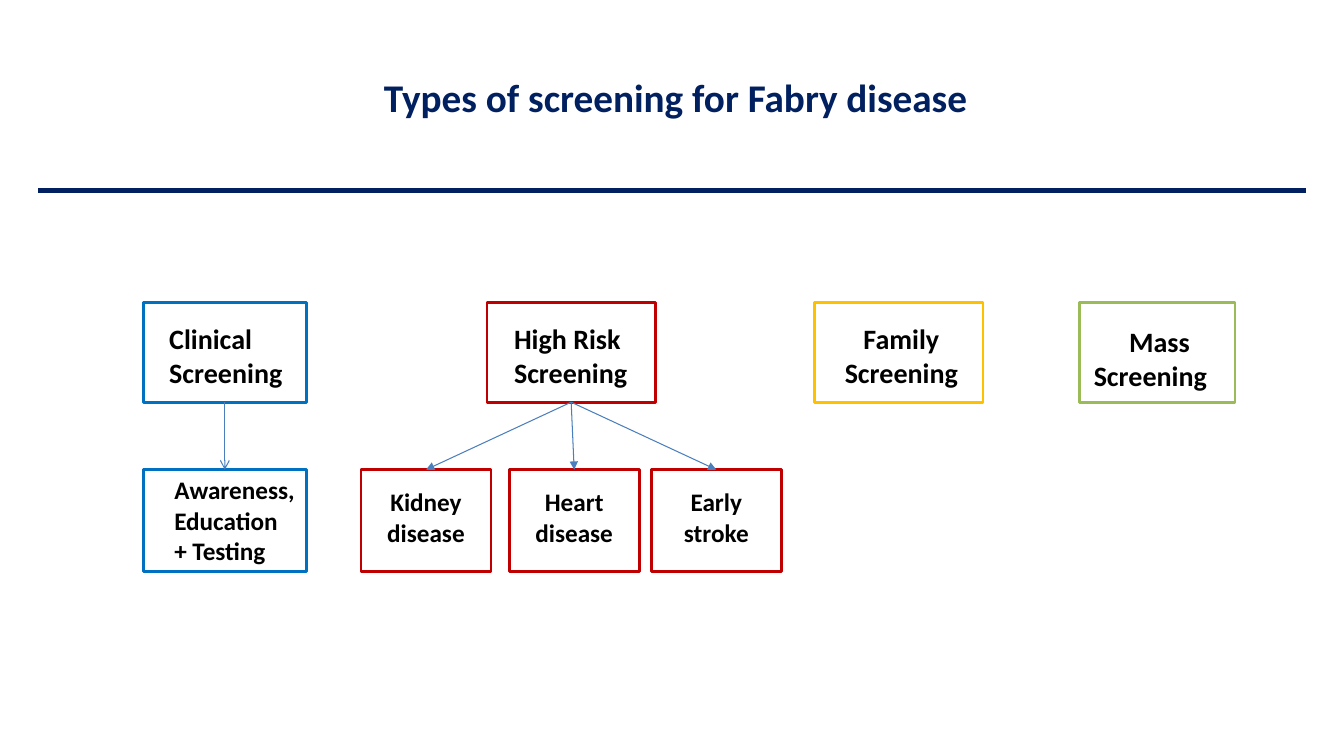
from dataclasses import dataclass

from lxml import etree
from pptx import Presentation
from pptx.dml.color import RGBColor
from pptx.enum.shapes import MSO_CONNECTOR, MSO_SHAPE
from pptx.enum.text import MSO_ANCHOR, PP_ALIGN
from pptx.oxml.ns import qn
from pptx.util import Inches, Pt

RECT = MSO_SHAPE.RECTANGLE
LINE = MSO_CONNECTOR.STRAIGHT
LEFT, MID = PP_ALIGN.LEFT, PP_ALIGN.CENTER
TOP, CENTER = MSO_ANCHOR.TOP, MSO_ANCHOR.MIDDLE


@dataclass(frozen=True)
class Theme:
    font: str = "Calibri"
    navy: str = "002060"
    blue: str = "0070C0"
    red: str = "C00000"
    gold: str = "FFC000"
    green: str = "9BBB59"
    arrow: str = "4B7EBC"
    ink: str = "000000"
    title: int = 28
    head: int = 20
    item: int = 18
    rule: float = 3.5
    edge: float = 2
    thin: float = 0.75


THEME = Theme()


def write(frame, lines, size, color, aligns, anchor=TOP):
    frame.word_wrap = True
    frame.vertical_anchor = anchor
    frame.text = "\n".join(lines)
    for para, align in zip(frame.paragraphs, aligns):
        para.alignment = align
        for run in para.runs:
            font = run.font
            font.name, font.size, font.bold = THEME.font, Pt(size), True
            font.color.rgb = RGBColor.from_string(color)


def join(slide, start, end, color, width, head=None):
    line = slide.shapes.add_connector(LINE, *map(Inches, start + end))
    line.line.color.rgb = RGBColor.from_string(color)
    line.line.width = Pt(width)
    props = line.line._get_or_add_ln()
    if head:
        etree.SubElement(props, qn("a:tailEnd"), type=head)
    etree.SubElement(props.getparent(), qn("a:effectLst"))
    return line


def link(slide, upper, lower, head):
    line = join(slide, (0, 0), (0, 0), THEME.arrow, THEME.thin, head)
    line.begin_connect(upper, 2)
    line.end_connect(lower, 0)


def card(slide, box, color, lines, size, inset, aligns):
    left, top, width, height = box
    rect = slide.shapes.add_shape(RECT, *map(Inches, box))
    rect.shadow.inherit = False
    rect.fill.background()
    rect.line.color.rgb = RGBColor.from_string(color)
    rect.line.width = Pt(THEME.edge)
    dx, dy, wide, high = inset
    label = slide.shapes.add_textbox(
        *map(Inches, (left + dx, top + dy, wide, high)))
    write(label.text_frame, lines, size, THEME.ink, aligns)
    return rect


def header(slide, box):
    left, top, width, height = box
    join(slide, (left, top + height), (left + width, top + height),
         THEME.navy, THEME.rule)
    title = slide.shapes.title
    title.left, title.top = Inches(left + 1.69), Inches(top + 0.68)
    title.width, title.height = Inches(9.26), Inches(0.57)
    write(title.text_frame, ["Types of screening for Fabry disease"],
          THEME.title, THEME.navy, [MID], CENTER)


def chart(slide, box):
    left, top, width, height = box
    tall, low = 0.99, 1.01
    row = top + height - low
    heads = [
        (0, 1.62, THEME.blue, "Clinical", (0.16, 0.14, 1.58, 0.77), (LEFT, LEFT)),
        (3.41, 1.67, THEME.red, "High Risk", (0.17, 0.14, 1.58, 0.77), (LEFT, LEFT)),
        (6.66, 1.67, THEME.gold, "Family", (0.09, 0.14, 1.54, 0.77), (MID, MID)),
        (9.29, 1.54, THEME.green, "Mass", (0.04, 0.17, 1.5, 0.77), (MID, LEFT)),
    ]
    clinic, risk, *_ = [
        card(slide, (left + dx, top, wide, tall), color,
             [name, "Screening"], THEME.head, inset, aligns)
        for dx, wide, color, name, inset, aligns in heads
    ]
    aware = card(slide, (left, row, 1.62, low), THEME.blue,
                 ["Awareness,", "Education", "+ Testing"], THEME.item,
                 (0.21, 0, 1.62, low), [LEFT] * 3)
    link(slide, clinic, aware, "arrow")
    wide = 1.29
    for dx, name in ((2.16, "Kidney disease"), (3.63, "Heart disease"),
                     (5.04, "Early stroke")):
        child = card(slide, (left + dx, row, wide, low), THEME.red, [name],
                     THEME.item, (0, 0.12, wide, 0.71), [MID])
        link(slide, risk, child, "triangle")


def main():
    deck = Presentation()
    deck.slide_width, deck.slide_height = Inches(13.33), Inches(7.5)
    slide = deck.slides.add_slide(deck.slide_layouts[5])
    header(slide, (0.38, 0, 12.57, 1.89))
    chart(slide, (1.42, 3, 10.83, 2.67))
    deck.save("out.pptx")


if __name__ == "__main__":
    main()
